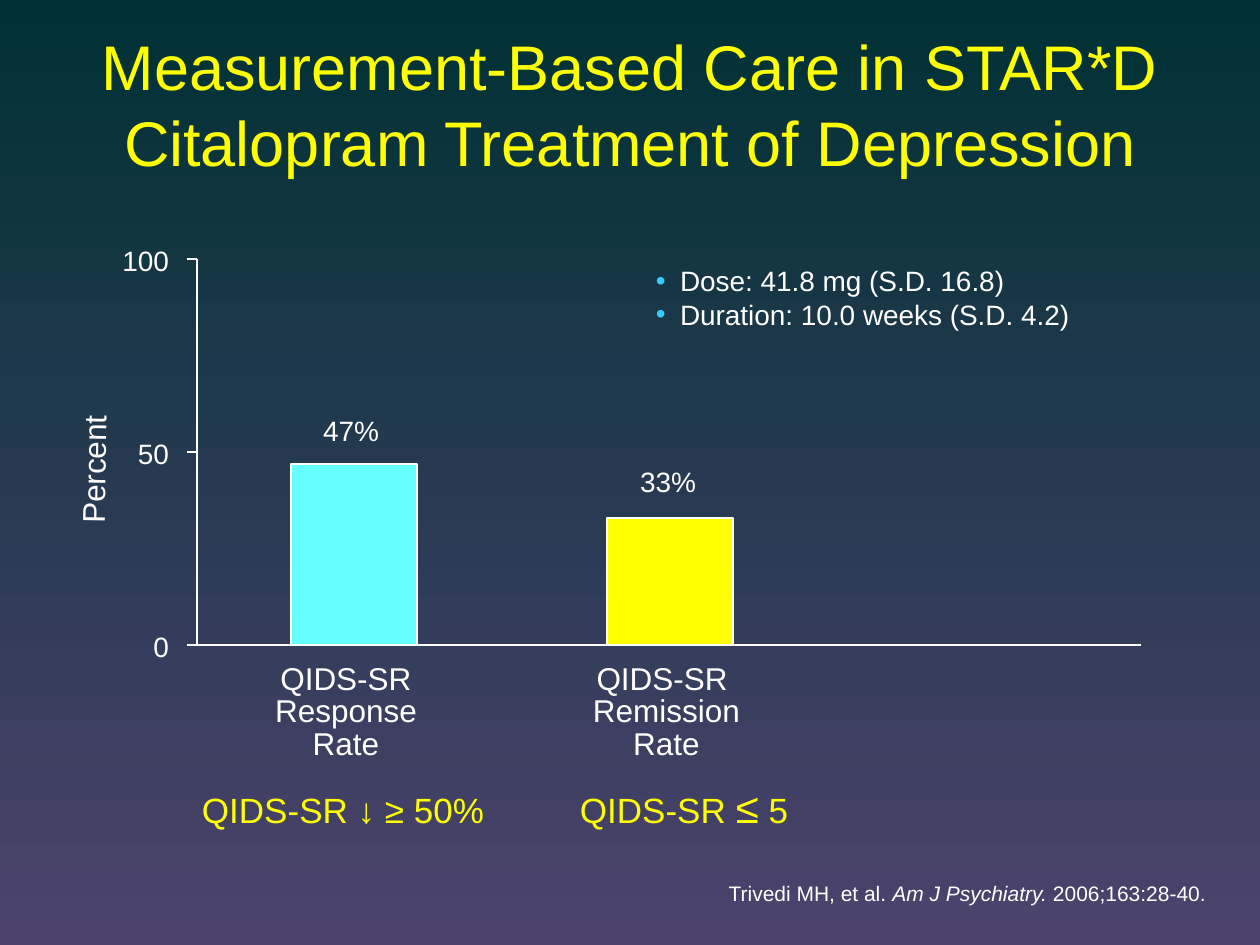
from lxml import etree
from pptx import Presentation
from pptx.dml.color import RGBColor
from pptx.enum.shapes import MSO_CONNECTOR, MSO_SHAPE
from pptx.enum.text import MSO_ANCHOR, MSO_AUTO_SIZE, PP_ALIGN
from pptx.oxml.ns import qn
from pptx.util import Emu, Pt

EMU_PER_PX = 914400 / 126
FONT = "Arial"
LEFT, CENTER, RIGHT = PP_ALIGN.LEFT, PP_ALIGN.CENTER, PP_ALIGN.RIGHT
TOP, MIDDLE = MSO_ANCHOR.TOP, MSO_ANCHOR.MIDDLE
FIT_TEXT = MSO_AUTO_SIZE.SHAPE_TO_FIT_TEXT
STRAIGHT, RECTANGLE = MSO_CONNECTOR.STRAIGHT, MSO_SHAPE.RECTANGLE

WHITE = RGBColor(0xFF, 0xFF, 0xFF)
YELLOW = RGBColor(0xFF, 0xFF, 0x00)
CYAN = RGBColor(0x66, 0xFF, 0xFF)
BULLET_BLUE = RGBColor(0x33, 0xCC, 0xFF)
DARK_TEAL = RGBColor(0x00, 0x31, 0x34)
PURPLE = RGBColor(0x4C, 0x43, 0x6D)


def px(length):
    return Emu(round(length * EMU_PER_PX))


class SlideBuilder:
    def __init__(self, presentation):
        self.slide = presentation.slides.add_slide(presentation.slide_layouts[6])

    def background(self, top_color, bottom_color):
        fill = self.slide.background.fill
        fill.gradient()
        fill.gradient_angle = 270
        for stop, color, position in zip(
                fill.gradient_stops, (top_color, bottom_color), (0, 1)):
            stop.color.rgb = color
            stop.position = position

    def text(self, left, top, width, height, lines, size, color=WHITE,
             align=LEFT, anchor=TOP, wrap=False, margins=(13, 6),
             line_spacing=None, rotation=0):
        shape = self.slide.shapes.add_textbox(
            px(left), px(top), px(width), px(height))
        shape.rotation = rotation
        frame = shape.text_frame
        frame.text = lines
        frame.word_wrap = wrap
        if not wrap:
            frame.auto_size = FIT_TEXT
        frame.vertical_anchor = anchor
        frame.margin_left = frame.margin_right = px(margins[0])
        frame.margin_top = frame.margin_bottom = px(margins[1])
        for paragraph in frame.paragraphs:
            paragraph.alignment = align
            paragraph.line_spacing = line_spacing
            for run in paragraph.runs:
                self.format(run, size, color)
        return frame

    def format(self, run, size, color):
        run.font.name = FONT
        run.font.size = Pt(size)
        run.font.color.rgb = color

    def mixed_text(self, left, top, width, height, parts, color=WHITE,
                   align=LEFT):
        """Write one paragraph from (text, size, italic) parts."""
        frame = self.text(left, top, width, height, "", 12, align=align)
        for words, size, italic in parts:
            run = frame.paragraphs[0].add_run()
            run.text = words
            self.format(run, size, color)
            run.font.italic = italic

    def bullets(self, left, top, width, height, lines, size, indent):
        frame = self.text(left, top, width, height, lines, size, wrap=True)
        for paragraph in frame.paragraphs:
            properties = paragraph._p.get_or_add_pPr()
            properties.set("marL", str(px(indent)))
            properties.set("indent", str(-px(indent)))
            bullet_color = etree.SubElement(properties, qn("a:buClr"))
            etree.SubElement(bullet_color, qn("a:srgbClr"), val=str(BULLET_BLUE))
            etree.SubElement(properties, qn("a:buFont"), typeface=FONT)
            etree.SubElement(properties, qn("a:buChar"), char="•")
        return frame

    def line(self, x1, y1, x2, y2):
        connector = self.slide.shapes.add_connector(
            STRAIGHT, px(x1), px(y1), px(x2), px(y2))
        connector.line.color.rgb = WHITE
        connector.line.width = Pt(1.5)
        etree.SubElement(connector._element.spPr, qn("a:effectLst"))

    def bar(self, left, top, width, height, color):
        shape = self.slide.shapes.add_shape(
            RECTANGLE, px(left), px(top), px(width), px(height))
        shape.shadow.inherit = False
        shape.fill.solid()
        shape.fill.fore_color.rgb = color
        shape.line.color.rgb = WHITE
        shape.line.width = Pt(0.75)


def main():
    presentation = Presentation()
    presentation.slide_width, presentation.slide_height = px(1260), px(945)
    builder = SlideBuilder(presentation)
    builder.background(DARK_TEAL, PURPLE)

    # Title
    builder.text(
        0, 24, 1260, 158,
        "Measurement-Based Care in STAR*D\vCitalopram Treatment of Depression",
        36, YELLOW, CENTER, MIDDLE, wrap=True)

    # Bars with their value and category labels
    axis_x, tick_x, axis_top, axis_bottom = 197, 187, 259, 645
    axis_height = axis_bottom - axis_top
    bar_width = 126
    bars = [
        (291, 47, CYAN, 310, 407, "QIDS-SR\nResponse\nRate", 258, 176),
        (607, 33, YELLOW, 627, 459, "QIDS-SR \nRemission\nRate", 574, 185),
    ]
    for (left, value, color, value_left, value_top,
         category, category_left, category_width) in bars:
        height = round(axis_height * value / 100)
        builder.bar(left, axis_bottom - height, bar_width, height, color)
        builder.text(value_left, value_top, 82, 47, f"{value}%", 16,
                     align=CENTER)
        builder.text(category_left, 659, category_width, 110, category, 18,
                     align=CENTER, line_spacing=0.85)

    # Axes, ticks and tick labels
    builder.line(tick_x, axis_bottom, 1141, axis_bottom)
    builder.line(axis_x, axis_top, axis_x, axis_bottom)
    for value in (0, 50, 100):
        y = axis_bottom - axis_height * value // 100
        builder.line(tick_x, y, axis_x, y)
        label_width = 16 * len(str(value))
        builder.text(169 - label_width, y - 15, label_width, 34, str(value),
                     16, align=RIGHT, margins=(0, 0))
    builder.text(13, 446, 166, 47, "Percent", 18, align=CENTER,
                 line_spacing=0.9, rotation=270.9)

    # Dose and duration
    notes = builder.bullets(
        551, 258, 624, 92,
        "Dose: 41.8 mg (S.D. 16.8)\nDuration: 10.0 weeks (S.D. 4.2)", 16, 24)
    notes.margin_left = px(105)

    # Criteria below the categories
    builder.text(189, 782, 310, 54, "QIDS-SR ↓ ≥ 50%", 20, YELLOW)
    builder.mixed_text(
        567, 776, 240, 63,
        [("QIDS-SR ", 20, False), ("≤", 24, False), (" 5", 20, False)], YELLOW)

    # Citation
    builder.mixed_text(
        691, 875, 528, 38,
        [("Trivedi MH, et al. ", 12, False), ("Am J Psychiatry. ", 12, True),
         ("2006;163:28-40.", 12, False)], align=RIGHT)

    presentation.save("out.pptx")


if __name__ == "__main__":
    main()
